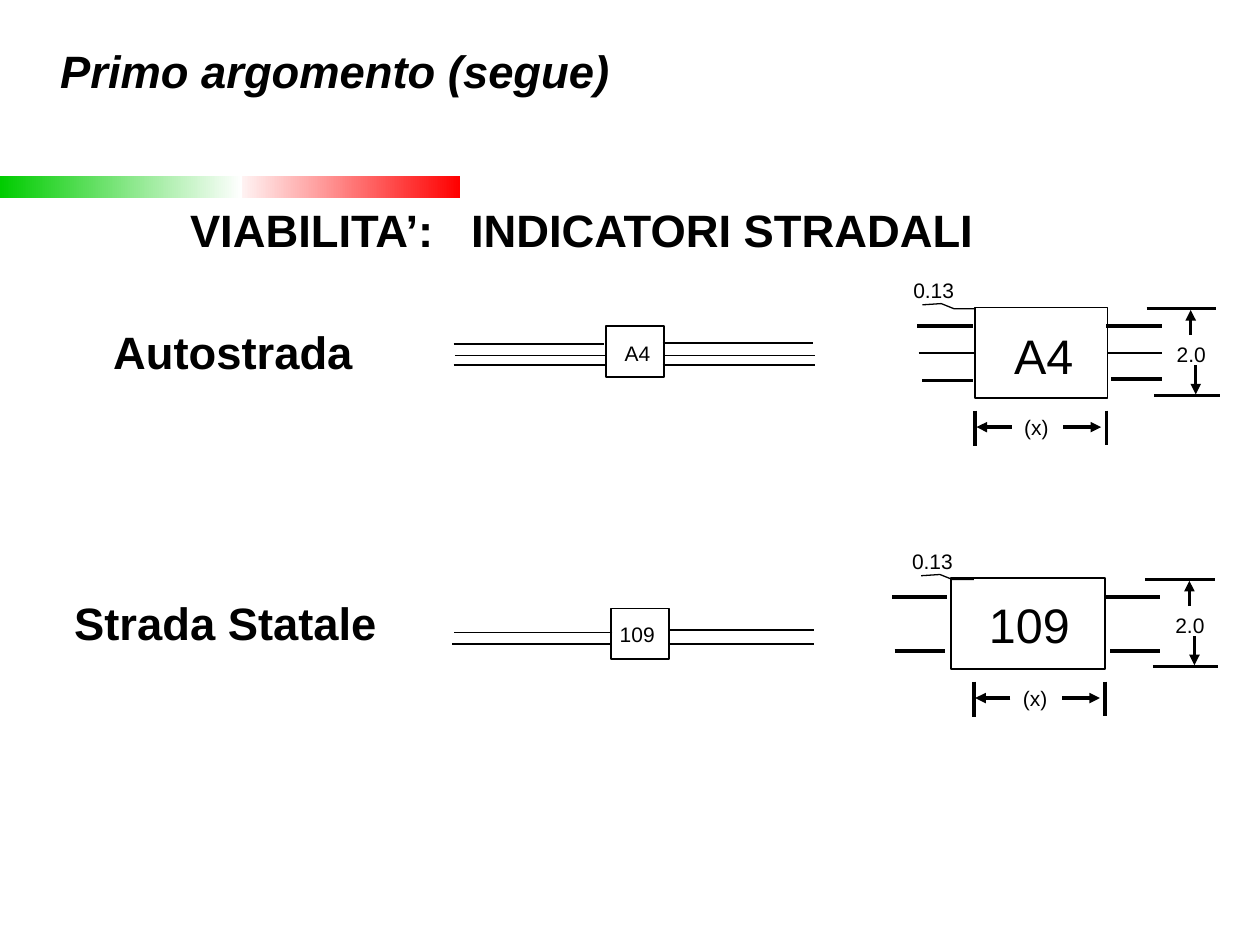
from dataclasses import dataclass

import pptx
import pptx.dml.color
import pptx.enum.dml
import pptx.enum.shapes
import pptx.enum.text
import pptx.oxml
import pptx.oxml.ns
import pptx.util
from pptx.util import Inches

BLACK = "000000"
HAIRLINE, THIN, MEDIUM, THICK = 0, 0.5, 1.05, 2.15
SMALL, HEADING, LARGE = 12, 25.9, 27.7


@dataclass
class Line:
    x1: float
    y1: float
    x2: float
    y2: float
    width: float = HAIRLINE
    arrow: bool = False


@dataclass
class Label:
    text: str
    x: float
    y: float
    w: float
    h: float
    size: float = SMALL
    bold: bool = False


@dataclass
class Box:
    x: float
    y: float
    w: float
    h: float


@dataclass
class Indicator:
    dx: float
    dy: float
    boxes: list[Box]
    labels: list[Label]
    lines: list[Line]


def color(value: str) -> pptx.dml.color.RGBColor:
    return pptx.dml.color.RGBColor.from_string(value)


def draw_gradient(slide, x: float, w: float, start: str, end: str) -> None:
    sp = slide.shapes.add_shape(
        pptx.enum.shapes.MSO_SHAPE.RECTANGLE,
        Inches(x), Inches(1.4), Inches(w), Inches(0.17))
    sp.shadow.inherit = False
    sp.line.fill.background()
    sp.fill.gradient()
    sp.fill.gradient_angle = 0
    for stop, position, value in zip(sp.fill.gradient_stops, (0, 1), (start, end)):
        stop.position = position
        stop.color.rgb = color(value)


def draw_box(slide, box: Box):
    sp = slide.shapes.add_shape(
        pptx.enum.shapes.MSO_SHAPE.RECTANGLE,
        Inches(box.x), Inches(box.y), Inches(box.w), Inches(box.h))
    sp.shadow.inherit = False
    sp.fill.background()
    sp.line.color.rgb = color(BLACK)
    sp.line.width = pptx.util.Pt(MEDIUM)
    return sp


def draw_line(slide, line: Line, dx: float = 0, dy: float = 0):
    cxn = slide.shapes.add_connector(
        pptx.enum.shapes.MSO_CONNECTOR.STRAIGHT,
        Inches(line.x1 + dx), Inches(line.y1 + dy),
        Inches(line.x2 + dx), Inches(line.y2 + dy))
    cxn.line.color.rgb = color(BLACK)
    cxn.line.width = pptx.util.Pt(line.width)
    if line.arrow:
        tail = pptx.oxml.ns.qn("a:tailEnd")
        cxn.line._get_or_add_ln().makeelement(tail)
        cxn.line._get_or_add_ln().append(
            pptx.oxml.parse_xml(f'<a:tailEnd {pptx.oxml.ns.nsdecls("a")} type="triangle"/>'))
    cxn._element.spPr.append(
        pptx.oxml.parse_xml(f'<a:effectLst {pptx.oxml.ns.nsdecls("a")}/>'))
    return cxn


def draw_label(slide, label: Label, dx: float = 0, dy: float = 0):
    tb = slide.shapes.add_textbox(
        Inches(label.x + dx), Inches(label.y + dy), Inches(label.w), Inches(label.h))
    tf = tb.text_frame
    tf.text = label.text
    tf.word_wrap = False
    tf.auto_size = pptx.enum.text.MSO_AUTO_SIZE.SHAPE_TO_FIT_TEXT
    tf.vertical_anchor = pptx.enum.text.MSO_ANCHOR.MIDDLE
    r = tf.paragraphs[0].runs[0]
    r.font.name = "Arial"
    r.font.size = pptx.util.Pt(label.size)
    r.font.bold = label.bold
    r.font.color.rgb = color(BLACK)
    return tb


def draw_leader(slide, dx: float, dy: float) -> None:
    points = [(7.74, 2.45), (7.57, 2.45), (7.47, 2.41), (7.32, 2.42)]
    corners = [(Inches(x + dx), Inches(y + dy)) for x, y in points]
    builder = slide.shapes.build_freeform(*corners[0])
    builder.add_line_segments(corners[1:], close=False)
    sp = builder.convert_to_shape()
    sp.shadow.inherit = False
    sp.fill.background()
    sp.line.color.rgb = color(BLACK)
    sp.line.width = pptx.util.Pt(HAIRLINE)


DIMENSION_LINES = [
    Line(9.1, 2.45, 9.65, 2.45),
    Line(9.16, 3.14, 9.68, 3.14),
    Line(9.49, 2.9, 9.49, 3.13, arrow=True),
    Line(9.45, 2.66, 9.45, 2.46, arrow=True),
    Line(7.74, 3.26, 7.74, 3.54),
    Line(8.78, 3.26, 8.78, 3.53),
    Line(8.44, 3.39, 8.74, 3.39, arrow=True),
    Line(8.03, 3.39, 7.75, 3.39, arrow=True),
]
DIMENSION_LABELS = [
    Label("(x)", 8.03, 3.24, 0.4, 0.3),
    Label("0.13", 7.15, 2.15, 0.53, 0.3),
    Label("2.0", 9.24, 2.66, 0.43, 0.3),
]

MOTORWAY = Indicator(
    0, 0,
    [Box(4.81, 2.59, 0.46, 0.4), Box(7.74, 2.44, 1.05, 0.72)],
    [Label("A4", 4.86, 2.65, 0.41, 0.3),
     Label("A4", 7.95, 2.53, 0.68, 0.57, LARGE),
     Label("Autostrada", 0.8, 2.52, 2.11, 0.54, HEADING, True)],
    [Line(3.6, 2.73, 4.79, 2.73, MEDIUM), Line(5.26, 2.72, 6.45, 2.72, MEDIUM),
     Line(3.61, 2.82, 4.8, 2.82, THIN), Line(5.28, 2.82, 6.47, 2.82, THIN),
     Line(3.6, 2.9, 4.8, 2.9, MEDIUM), Line(5.26, 2.9, 6.47, 2.9, MEDIUM),
     Line(7.28, 2.59, 7.72, 2.59, THICK), Line(8.78, 2.59, 9.22, 2.59, THICK),
     Line(7.32, 3.02, 7.72, 3.02, THICK), Line(8.82, 3.01, 9.22, 3.01, THICK)])

STATE_ROAD = Indicator(
    -0.01, 2.15,
    [Box(4.85, 4.83, 0.46, 0.4), Box(7.55, 4.59, 1.22, 0.72)],
    [Label("109", 4.82, 4.88, 0.48, 0.3),
     Label("109", 7.75, 4.67, 0.85, 0.57, LARGE),
     Label("Strada Statale", 0.49, 4.67, 2.62, 0.54, HEADING, True)],
    [Line(4.86, 5.02, 3.6, 5.02, MEDIUM), Line(5.31, 5, 6.46, 5, MEDIUM),
     Line(4.84, 5.11, 3.59, 5.11, MEDIUM), Line(5.31, 5.11, 6.46, 5.11, MEDIUM),
     Line(7.08, 4.74, 7.52, 4.74, THICK), Line(8.77, 4.74, 9.21, 4.74, THICK),
     Line(7.1, 5.17, 7.5, 5.17, THICK), Line(8.81, 5.17, 9.21, 5.17, THICK)])


def draw_indicator(slide, indicator: Indicator):
    for line in indicator.lines:
        draw_line(slide, line)
    boxes = [draw_box(slide, box) for box in indicator.boxes]
    draw_leader(slide, indicator.dx, indicator.dy)
    for line in DIMENSION_LINES:
        draw_line(slide, line, indicator.dx, indicator.dy)
    for label in DIMENSION_LABELS:
        draw_label(slide, label, indicator.dx, indicator.dy)
    for label in indicator.labels:
        draw_label(slide, label)
    return boxes[-1]


def main() -> None:
    prs = pptx.Presentation()
    prs.slide_width, prs.slide_height = Inches(10), Inches(7.5)
    slide = prs.slides.add_slide(prs.slide_layouts[6])
    draw_gradient(slide, 1.83, 1.82, "FFFFFF", "FF0000")
    draw_gradient(slide, 0, 1.92, "00CC00", "FFFFFF")

    sign = draw_indicator(slide, MOTORWAY)
    draw_line(slide, Line(7.29, 2.8, 7.74, 2.8, MEDIUM)).end_connect(sign, 1)
    draw_line(slide, Line(8.79, 2.8, 9.22, 2.8, MEDIUM)).begin_connect(sign, 3)
    draw_indicator(slide, STATE_ROAD)

    draw_label(slide, Label("INDICATORI STRADALI", 3.64, 1.55, 4.24, 0.54, HEADING, True))
    draw_label(slide, Label("VIABILITA’:", 1.41, 1.55, 2.19, 0.54, HEADING, True))
    title = draw_label(
        slide, Label("Primo argomento (segue)", 0.38, 0.29, 5.46, 0.54, HEADING, True))
    title.text_frame.word_wrap = True
    title.text_frame.vertical_anchor = pptx.enum.text.MSO_ANCHOR.TOP
    title.text_frame.paragraphs[0].runs[0].font.italic = True
    prs.save("out.pptx")


if __name__ == "__main__":
    main()
